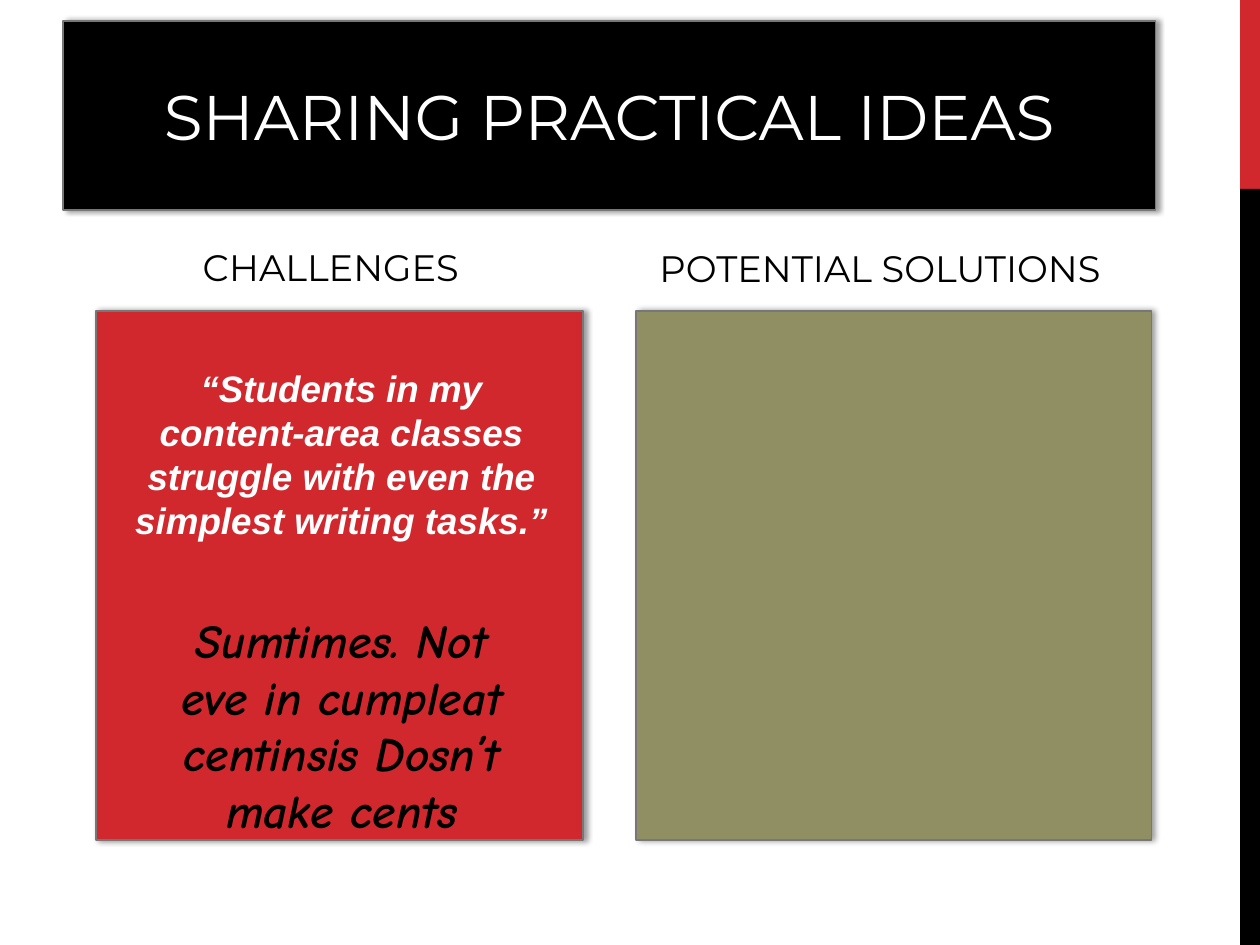
from dataclasses import dataclass

from lxml.etree import SubElement
from pptx import Presentation
from pptx.dml.color import RGBColor
from pptx.enum.shapes import MSO_SHAPE
from pptx.enum.text import MSO_ANCHOR, MSO_AUTO_SIZE, PP_ALIGN
from pptx.oxml.ns import qn
from pptx.shapes.autoshape import Shape
from pptx.slide import Slide
from pptx.util import Pt


@dataclass(frozen=True)
class Theme:
    black: str = "000000"
    white: str = "FFFFFF"
    red: str = "D1282E"
    olive: str = "908F63"
    outline: str = "777777"
    heading_font: str = "Montserrat"
    quote_font: str = "Arial"
    sample_font: str = "Comic Neue"
    title_size: float = 36
    body_size: float = 21
    sample_size: float = 27


THEME = Theme()


@dataclass(frozen=True)
class Box:
    left: float
    top: float
    width: float
    height: float


@dataclass(frozen=True)
class Panel:
    box: Box
    color: str
    framed: bool


@dataclass(frozen=True)
class Label:
    box: Box
    text: str
    font: str
    size: float
    color: str
    emphasis: bool = False
    anchor: MSO_ANCHOR = MSO_ANCHOR.TOP


TITLE = Label(Box(36, 11.9, 624.24, 108), "SHARING PRACTICAL IDEAS", THEME.heading_font,
              THEME.title_size, THEME.white, anchor=MSO_ANCHOR.MIDDLE)

PANELS = [
    # Side bar
    Panel(Box(708.7, 0, 11.3, 108), THEME.red, False),
    Panel(Box(708.7, 108, 11.3, 432), THEME.black, False),
    # Columns
    Panel(Box(54.72, 177.6, 278.64, 302.4), THEME.red, True),
    Panel(Box(363.5, 177.6, 294.5, 302.4), THEME.olive, True),
]

LABELS = [
    # Column headings
    Label(Box(36, 118.1, 306, 50.4), "CHALLENGES", THEME.heading_font,
          THEME.body_size, THEME.black, anchor=MSO_ANCHOR.BOTTOM),
    Label(Box(325.7, 118.8, 354.24, 50.4), "POTENTIAL SOLUTIONS", THEME.heading_font,
          THEME.body_size, THEME.black, anchor=MSO_ANCHOR.BOTTOM),
    # Teacher's quote and student's writing sample
    Label(Box(64.5, 205.2, 261.36, 302.4),
          "“Students in my content-area classes struggle with even the simplest writing tasks.”",
          THEME.quote_font, THEME.body_size, THEME.white, emphasis=True),
    Label(Box(89, 345.6, 212.4, 137.5),
          "Sumtimes. Not eve in cumpleat centinsis Dosn’t make cents",
          THEME.sample_font, THEME.sample_size, THEME.black, emphasis=True),
]


def fill_shape(shape: Shape, color: str, framed: bool) -> None:
    """Fill a shape; a framed one also gets a thin outline and a soft shadow."""
    shape.fill.solid()
    shape.fill.fore_color.rgb = RGBColor.from_string(color)
    shape.shadow.inherit = False
    if not framed:
        shape.line.fill.background()
        return
    shape.line.color.rgb = RGBColor.from_string(THEME.outline)
    shape.line.width = Pt(1)
    effects = shape.element.spPr.find(qn("a:effectLst"))
    shadow = SubElement(effects, qn("a:outerShdw"), blurRad=str(Pt(3.1)),
                        dist=str(Pt(1.8)), dir="0", rotWithShape="0")
    shadow_color = SubElement(shadow, qn("a:srgbClr"), val=THEME.black)
    SubElement(shadow_color, qn("a:alpha"), val="40000")


def write_text(shape: Shape, label: Label) -> None:
    text_frame = shape.text_frame
    text_frame.text = label.text
    text_frame.word_wrap = True
    text_frame.auto_size = MSO_AUTO_SIZE.NONE
    text_frame.vertical_anchor = label.anchor
    paragraph = text_frame.paragraphs[0]
    paragraph.alignment = PP_ALIGN.CENTER
    font = paragraph.runs[0].font
    font.name = label.font
    font.size = Pt(label.size)
    font.bold = font.italic = label.emphasis
    font.color.rgb = RGBColor.from_string(label.color)


def in_points(box: Box) -> tuple[Pt, Pt, Pt, Pt]:
    return Pt(box.left), Pt(box.top), Pt(box.width), Pt(box.height)


def add_panel(slide: Slide, panel: Panel) -> None:
    shape = slide.shapes.add_shape(MSO_SHAPE.RECTANGLE, *in_points(panel.box))
    fill_shape(shape, panel.color, panel.framed)


def add_label(slide: Slide, label: Label) -> None:
    write_text(slide.shapes.add_textbox(*in_points(label.box)), label)


def add_title(slide: Slide, label: Label) -> None:
    title = slide.shapes.title
    title.left, title.top, title.width, title.height = in_points(label.box)
    fill_shape(title, THEME.black, True)
    write_text(title, label)


def main() -> None:
    presentation = Presentation()
    presentation.slide_width, presentation.slide_height = Pt(720), Pt(540)
    slide = presentation.slides.add_slide(presentation.slide_layouts[5])
    add_title(slide, TITLE)
    for panel in PANELS:
        add_panel(slide, panel)
    for label in LABELS:
        add_label(slide, label)
    presentation.save("out.pptx")


if __name__ == "__main__":
    main()
